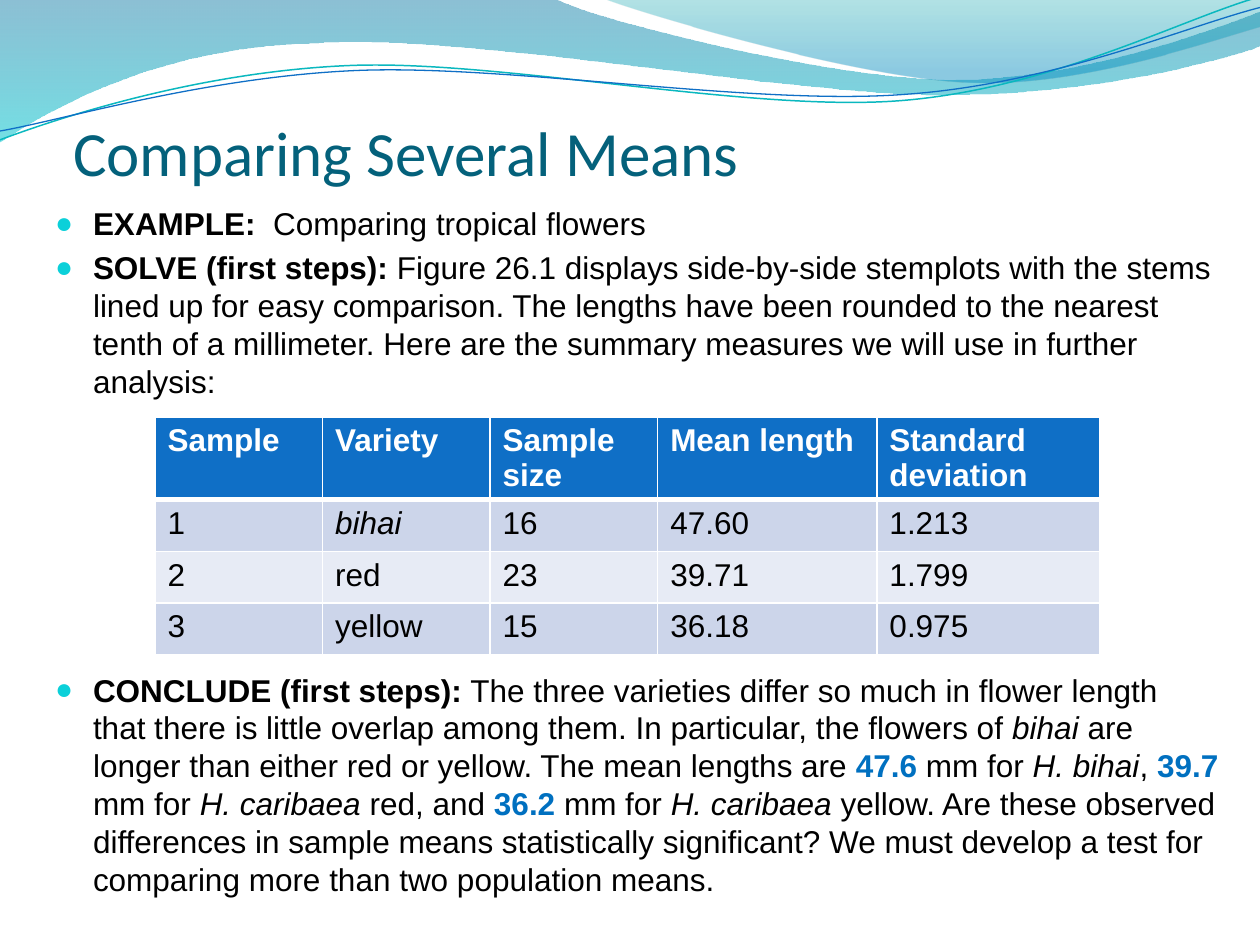
import math

from lxml import etree
from pptx import Presentation
from pptx.dml.color import RGBColor
from pptx.enum import text
from pptx.oxml import ns
from pptx.util import Inches, Pt

THEME = {
    "title": "04617B", "ink": "000000", "accent": "0070C0", "bullet": "0BD0D9",
    "header": "0F6FC6", "band": ("CCD5EA", "E7EBF5"), "white": "FFFFFF",
    "title_font": "Calibri", "body_font": "Arial", "title_size": 36, "body_size": 18,
}

# Content: a paragraph is a list of (words, style); b bold, i italic, n a key number
TITLE = [[("Comparing Several Means", "")]]
BODY = [
    [("EXAMPLE:", "b"), ("  Comparing tropical flowers", "")],
    [("SOLVE (first steps):", "b"),
     (" Figure 26.1 displays side-by-side stemplots with the stems lined up for easy "
      "comparison. The lengths have been rounded to the nearest tenth of a millimeter. "
      "Here are the summary measures we will use in further analysis:", "")],
    [("CONCLUDE (first steps):", "b"),
     (" The three varieties differ so much in flower length that there is little overlap "
      "among them. In particular, the flowers of ", ""),
     ("bihai", "i"),
     (" are longer than either red or yellow. The mean lengths are ", ""),
     ("47.6 ", "n"), ("mm for ", ""), ("H. bihai", "i"), (", ", ""),
     ("39.7", "n"), (" mm for ", ""), ("H. caribaea ", "i"), ("red, and ", ""),
     ("36.2", "n"), (" mm for ", ""), ("H. caribaea ", "i"),
     ("yellow. Are these observed differences in sample means statistically significant? "
      "We must develop a test for comparing more than two population means.", "")],
]
TABLE_GAP = 155  # points kept free above the last paragraph
TABLE = [
    ("Sample", "Variety", "Sample size", "Mean length", "Standard deviation"),
    ("1", "bihai", "16", "47.60", "1.213"),
    ("2", "red", "23", "39.71", "1.799"),
    ("3", "yellow", "15", "36.18", "0.975"),
]
COLUMN_WIDTHS = (1.33, 1.33, 1.33, 1.74, 1.77)
ROW_HEIGHTS = (0.65, 0.41, 0.41, 0.41)

# Waves: a start point, then steps of one point (line) or three points (curve)
BANDS = [
    ([[(0, 0)], [(4.4, -0.01)],
      [(4.76, 0.17), (6.64, 0.63), (7.58, 0.63)], [(8.53, 0.63), (9.58, 0.26), (10, 0.09)],
      [(10.01, 0.36)],
      [(9.83, 0.44), (8.7, 0.76), (7.46, 0.75)], [(6.22, 0.75), (3.82, 0.28), (2.57, 0.34)],
      [(1.29, 0.36), (0.46, 0.83), (-0.01, 1.13)], [(0, 0)]],
     [(0, "0074A1", 45), (1, "00C6CF", 55)]),
    ([[(4.79, -0.01)],
      [(5.09, 0.11), (6.82, 0.62), (7.69, 0.65)], [(8.56, 0.69), (9.61, 0.32), (10, 0.21)],
      [(10, 0)], [(4.79, -0.01)]],
     [(0, "00A1A9", 30), (0.8, "008BBF", 45)]),
]
STRANDS = [
    ([[(0, 1.11)], [(0.48, 0.93), (1.58, 0.57), (2.77, 0.52)],
      [(3.95, 0.47), (5.93, 0.89), (7.13, 0.8)], [(8.33, 0.71), (9.38, 0.15), (9.98, -0.02)]],
     (4.99, 0.58), "0AB8BF", 0.85),
    ([[(0, 1.04)], [(0.47, 0.96), (1.64, 0.61), (2.83, 0.56)],
      [(4.03, 0.51), (5.97, 0.84), (7.17, 0.75)], [(8.36, 0.67), (9.41, 0.21), (10, 0.06)]],
     (5, 0.59), "0F6FC6", 0.75),
]
STRAND_TILT = -2.7


def rgb(value):
    return RGBColor.from_string(value)


def add_xml(parent, tag, **attributes):
    return etree.SubElement(parent, ns.qn(tag), attributes)


def turn(outline, center, degrees):
    """Rotate every point of an outline about a center."""
    cos, sin = math.cos(math.radians(degrees)), math.sin(math.radians(degrees))
    cx, cy = center
    return [[(cx + (x - cx) * cos - (y - cy) * sin, cy + (x - cx) * sin + (y - cy) * cos)
             for x, y in step] for step in outline]


def add_wave(page, outline, close):
    points = [(Inches(x), Inches(y)) for step in outline for x, y in step]
    builder = page.shapes.build_freeform(*points[0])
    builder.add_line_segments(points[1:], close=close)
    wave = builder.convert_to_shape()
    wave.shadow.inherit = False
    # Join each three-point step into one cubic curve
    lines = iter(list(wave._element.spPr.iter(ns.qn("a:lnTo"))))
    for step in outline[1:]:
        group = [next(lines) for _ in step]
        if len(group) == 3:
            curve = etree.Element(ns.qn("a:cubicBezTo"))
            group[0].addprevious(curve)
            for line in group:
                curve.append(line[0])
                line.getparent().remove(line)
    return wave


def write(frame, paragraphs, *, font=THEME["body_font"], size=THEME["body_size"],
          color=THEME["ink"], bullets=False, spacing=None, last_gap=None):
    frame.word_wrap = True
    for index, spans in enumerate(paragraphs):
        para = frame.add_paragraph() if index else frame.paragraphs[0]
        para.line_spacing = spacing
        if bullets:
            is_last = index == len(paragraphs) - 1
            para.space_before = Pt(last_gap if last_gap and is_last else 0.2 * size)
            props = para._p.get_or_add_pPr()
            props.set("marL", str(Inches(0.3)))
            props.set("indent", str(-Inches(0.3)))
            add_xml(add_xml(props, "a:buClr"), "a:srgbClr", val=THEME["bullet"])
            add_xml(props, "a:buSzPct", val="95000")
            add_xml(props, "a:buFont", typeface=font)
            add_xml(props, "a:buChar", char="●")
        for words, style in spans:
            span = para.add_run()
            span.text = words
            span.font.name, span.font.size = font, Pt(size)
            span.font.bold, span.font.italic = style in ("b", "n"), style == "i"
            span.font.color.rgb = rgb(THEME["accent"] if style == "n" else color)


def add_text(page, place, paragraphs, **style):
    box = page.shapes.add_textbox(*map(Inches, place))
    write(box.text_frame, paragraphs, **style)
    return box.text_frame


def set_borders(cell):
    props = cell._tc.get_or_add_tcPr()
    for index, (side, width) in enumerate((("L", 1), ("R", 1), ("T", 1), ("B", 3))):
        line = etree.Element(ns.qn(f"a:ln{side}"), w=str(Pt(width)))
        add_xml(add_xml(line, "a:solidFill"), "a:srgbClr", val=THEME["white"])
        props.insert(index, line)


def add_summary(page, left, top):
    frame = page.shapes.add_table(len(TABLE), len(COLUMN_WIDTHS), Inches(left), Inches(top),
                                  Inches(sum(COLUMN_WIDTHS)), Inches(sum(ROW_HEIGHTS)))
    table = frame.table
    for column, width in zip(table.columns, COLUMN_WIDTHS):
        column.width = Inches(width)
    for r, (row, height) in enumerate(zip(TABLE, ROW_HEIGHTS)):
        table.rows[r].height = Inches(height)
        for c, words in enumerate(row):
            cell = table.cell(r, c)
            style = "b" if r == 0 else "i" if words == "bihai" else ""
            write(cell.text_frame, [[(words, style)]], spacing=None if r else Pt(20),
                  color=THEME["ink"] if r else THEME["white"])
            cell.fill.solid()
            cell.fill.fore_color.rgb = rgb(THEME["band"][(r - 1) % 2] if r else THEME["header"])
            if r == 0:
                set_borders(cell)


def main():
    deck = Presentation()
    deck.slide_width, deck.slide_height = Inches(10), Inches(7.5)
    page = deck.slides.add_slide(deck.slide_layouts[6])

    # Wave bands and strands along the top
    for outline, stops in BANDS:
        band = add_wave(page, outline, close=True)
        band.line.fill.background()
        band.fill.gradient()
        band.fill.gradient_angle = 270
        for stop, (position, color, _) in zip(band.fill.gradient_stops, stops):
            stop.position, stop.color.rgb = position, rgb(color)
        for node, (_, _, opacity) in zip(band._element.spPr.iter(ns.qn("a:srgbClr")), stops):
            add_xml(node, "a:alpha", val=str(opacity * 1000))
    for outline, center, color, width in STRANDS:
        strand = add_wave(page, turn(outline, center, -STRAND_TILT), close=False)
        strand.rotation = STRAND_TILT
        strand.fill.background()
        strand.line.color.rgb, strand.line.width = rgb(color), Pt(width)

    # Title
    title = add_text(page, (0.58, 0.17, 9.19, 1.33), TITLE, font=THEME["title_font"],
                     size=THEME["title_size"], color=THEME["title"])
    title.vertical_anchor = text.MSO_ANCHOR.BOTTOM
    title.margin_left = title.margin_right = title.margin_bottom = 0

    # Bulleted text with the summary table in its gap
    add_text(page, (0.34, 1.57, 9.43, 5.48), BODY, bullets=True, last_gap=TABLE_GAP)
    add_summary(page, 1.23, 3.31)

    deck.save("out.pptx")


if __name__ == "__main__":
    main()
